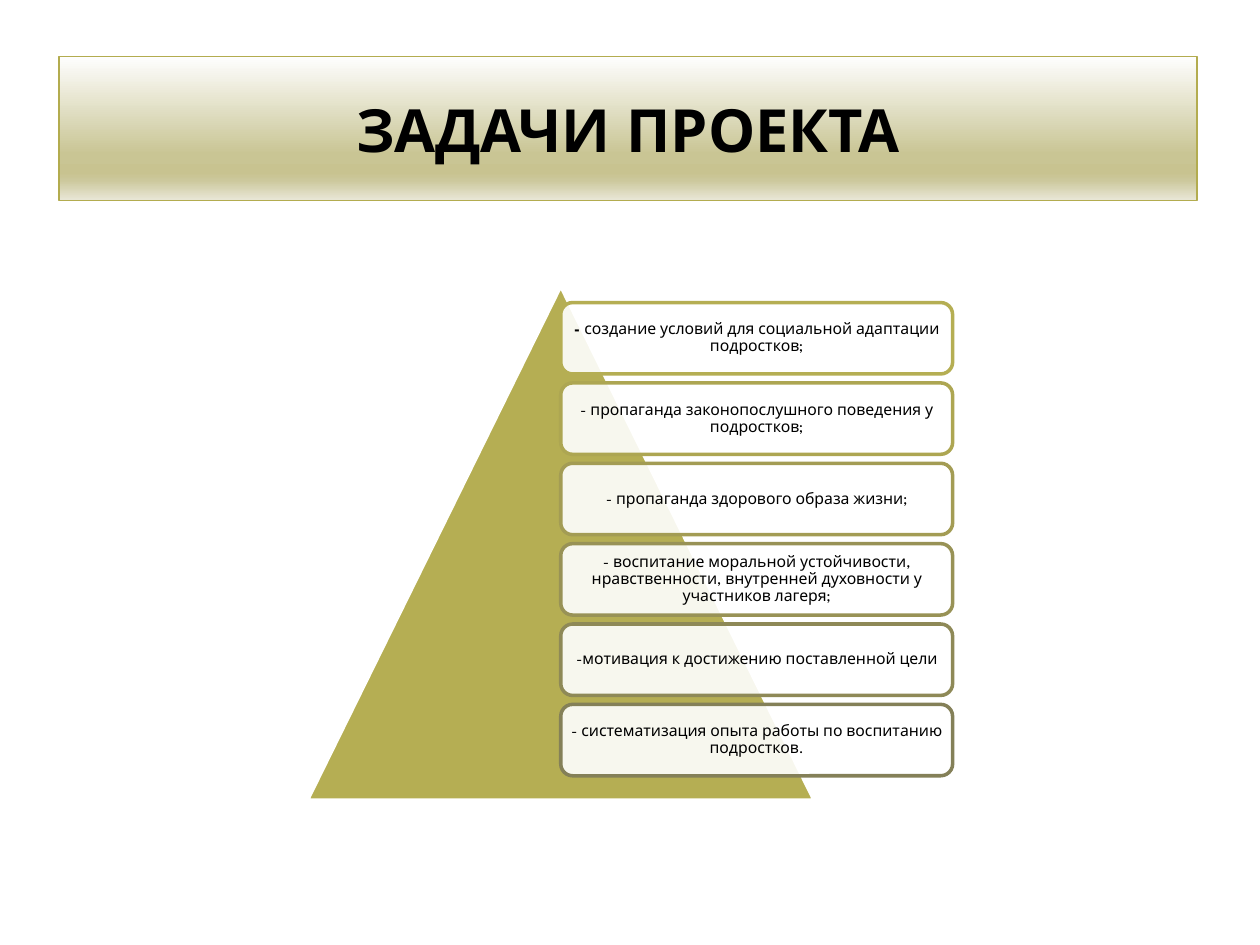
from lxml import etree
from pptx import Presentation
from pptx.dml.color import RGBColor
from pptx.enum.shapes import MSO_SHAPE as Shape
from pptx.enum.text import MSO_ANCHOR as Anchor, MSO_AUTO_SIZE as AutoSize, PP_ALIGN as Align
from pptx.oxml import parse_xml
from pptx.oxml.ns import nsdecls, qn
from pptx.util import Cm, Pt

FONT = "League Spartan"
TITLE_STOPS = [(0, "FEFEFE"), (68, "C9C594"), (81, "C8C390"), (86, "CCC89C"), (100, "E9E7D7")]
TASKS = [
    ("B5AE53", "- ", "создание условий для социальной адаптации подростков;"),
    ("ADA652", "", "- пропаганда законопослушного поведения у подростков;"),
    ("A39C54", "", "- пропаганда здорового образа жизни;"),
    ("989256", "", "- воспитание моральной устойчивости, нравственности, "
                   "внутренней духовности у участников лагеря;"),
    ("8E8957", "", "-мотивация к достижению поставленной цели"),
    ("848058", "", "- систематизация опыта работы по воспитанию подростков."),
]


def color(value):
    return RGBColor.from_string(value)


def paint(sp, fill, line, width):
    sp.fill.solid()
    sp.fill.fore_color.rgb = color(fill)
    sp.line.color.rgb = color(line)
    sp.line.width = Pt(width)


def set_alpha(sp, percent):
    clr = sp.fill._xPr.find(qn("a:solidFill"))[0]
    etree.SubElement(clr, qn("a:alpha")).set("val", str(percent * 1000))


def set_gradient(sp, stops):
    sp.fill.gradient()
    sp.fill.gradient_angle = 270
    gs_list = sp.fill._xPr.find(qn("a:gradFill")).find(qn("a:gsLst"))
    for gs in list(gs_list):
        gs_list.remove(gs)
    for pos, value in stops:
        gs_list.append(parse_xml(
            f'<a:gs {nsdecls("a")} pos="{pos * 1000}"><a:srgbClr val="{value}"/></a:gs>'))


def format_run(r, size, bold):
    r.font.name = FONT
    r.font.size = Pt(size)
    r.font.bold = bold
    r.font.color.rgb = color("000000")


def add_title(s, text, x, y, w, h):
    sp = s.shapes.title
    sp.left, sp.top, sp.width, sp.height = Cm(x), Cm(y), Cm(w), Cm(h)
    set_gradient(sp, TITLE_STOPS)
    sp.line.color.rgb = color("B3AC4F")
    sp.line.width = Pt(0.75)
    tf = sp.text_frame
    tf.text = text
    tf.auto_size = AutoSize.NONE
    tf.vertical_anchor = Anchor.MIDDLE
    p = tf.paragraphs[0]
    p.alignment = Align.CENTER
    format_run(p.runs[0], 34, True)


def add_task(s, task, x, y, w, h):
    line, lead, text = task
    sp = s.shapes.add_shape(Shape.ROUNDED_RECTANGLE, Cm(x), Cm(y), Cm(w), Cm(h))
    sp.shadow.inherit = False
    paint(sp, "FFFFFF", line, 2)
    set_alpha(sp, 90)
    tf = sp.text_frame
    tf.word_wrap = True
    tf.vertical_anchor = Anchor.MIDDLE
    tf.margin_left = tf.margin_right = tf.margin_top = tf.margin_bottom = Cm(0.1)
    p = tf.paragraphs[0]
    p.alignment = Align.CENTER
    p.line_spacing = 0.9
    for part, bold in ((lead, True), (text, False)):
        if part:
            r = p.add_run()
            r.text = part
            format_run(r, 9, bold)


def add_pyramid(s, tasks, x, y, w, h):
    sp = s.shapes.add_shape(Shape.ISOSCELES_TRIANGLE, Cm(x), Cm(y), Cm(w), Cm(h))
    sp.shadow.inherit = False
    paint(sp, "B5AE53", "FFFFFF", 2)
    box_h = 1.44
    step = box_h * 9 / 8
    for i, task in enumerate(tasks):
        add_task(s, task, x + w / 2, y + 0.33 + i * step, 7.9, box_h)


def main():
    prs = Presentation()
    prs.slide_width, prs.slide_height = Cm(25.4), Cm(19.05)
    s = prs.slides.add_slide(prs.slide_layouts[5])
    add_pyramid(s, TASKS, 6.2, 5.77, 10.21, 10.36)
    add_title(s, "ЗАДАЧИ ПРОЕКТА", 1.19, 1.14, 22.94, 2.9)
    prs.save("out.pptx")


if __name__ == "__main__":
    main()
